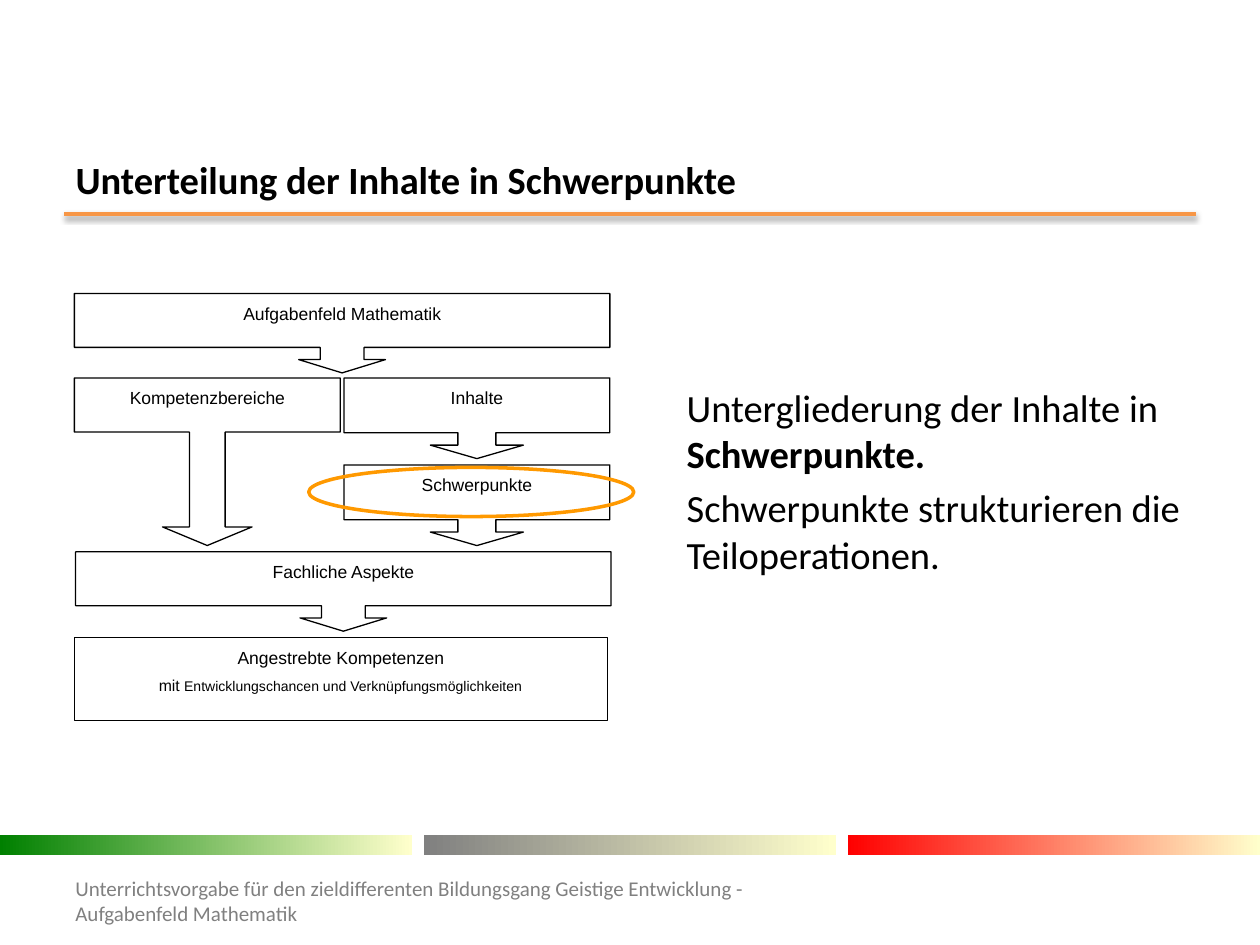
from lxml.etree import SubElement
from pptx import Presentation
from pptx.dml.color import RGBColor
from pptx.enum.shapes import MSO_CONNECTOR, MSO_SHAPE
from pptx.enum.text import MSO_ANCHOR, MSO_AUTO_SIZE, PP_ALIGN
from pptx.oxml.ns import qn
from pptx.util import Inches, Pt

COLORS = {"text": "000000", "paper": "FFFFFF", "footer": "808080", "rule": "F79646",
          "highlight": "FF9900", "cream": "FFFFCC"}
BAR_COLORS = ["008000", "808080", "FF0000"]

TITLE = "Unterteilung der Inhalte in Schwerpunkte"
BODY = [[("Untergliederung der Inhalte in ", False), ("Schwerpunkte.", True)],
        [("Schwerpunkte strukturieren die Teiloperationen.", False)]]
FOOTER = ("Unterrichtsvorgabe für den zieldifferenten Bildungsgang Geistige Entwicklung - "
          "Aufgabenfeld Mathematik")

# Diagram grid: two columns and five rows
LEFT, COL_W, COL_GAP = 0.59, 2.11, 0.03
FULL_W = 2 * COL_W + COL_GAP
RIGHT = LEFT + COL_W + COL_GAP
ROWS = [2.33, 3.0, 3.69, 4.38, 5.06]
STEP_H = 0.64
WIDE = (0.553, 0.546, 0.167, 0.679)
NARROW = (0.471, 0.577, 0.167, 0.679)
LONG = (0.213, 0.267, 0.111, 0.323)
# text, left, row, width, height, arrow proportions
STEPS = [
    ("Aufgabenfeld Mathematik", LEFT, 0, FULL_W, 0.63, WIDE),
    ("Kompetenzbereiche", LEFT, 1, COL_W, ROWS[2] + STEP_H - ROWS[1], LONG),
    ("Inhalte", RIGHT, 1, COL_W, STEP_H, NARROW),
    ("Schwerpunkte", RIGHT, 2, COL_W, STEP_H, NARROW),
    ("Fachliche Aspekte", LEFT + 0.01, 3, FULL_W, 0.63, WIDE),
]
GOAL = [[("Angestrebte Kompetenzen", 10)],
        [("mit ", 9), ("Entwicklungschancen und Verknüpfungsmöglichkeiten", 8)]]


def rgb(name):
    return RGBColor.from_string(COLORS.get(name, name))


def place(shape, left, top, width, height):
    shape.left, shape.top = Inches(left), Inches(top)
    shape.width, shape.height = Inches(width), Inches(height)


def add_run(p, text, size, font="Calibri", color="text", bold=False):
    r = p.add_run()
    r.text = text
    r.font.size, r.font.name, r.font.bold = Pt(size), font, bold
    r.font.color.rgb = rgb(color)


def add_shape(s, kind, left, top, width, height, line="text", weight=0.75):
    shape = s.shapes.add_shape(kind, *map(Inches, (left, top, width, height)))
    shape.shadow.inherit = False
    shape.fill.solid()
    shape.fill.fore_color.rgb = rgb("paper")
    shape.line.color.rgb = rgb(line)
    shape.line.width = Pt(weight)
    return shape


def write_step(shape, paragraphs, after):
    tf = shape.text_frame
    tf.word_wrap = True
    tf.vertical_anchor = MSO_ANCHOR.TOP
    for i, runs in enumerate(paragraphs):
        p = tf.paragraphs[0] if i == 0 else tf.add_paragraph()
        p.alignment, p.line_spacing, p.space_after = PP_ALIGN.CENTER, 1.15, Pt(after)
        for text, size in runs:
            add_run(p, text, size, "Arial")


def set_indent(p, margin, indent):
    pPr = p._p.get_or_add_pPr()
    pPr.set("marL", str(Inches(margin)))
    pPr.set("indent", str(Inches(indent)))
    return pPr


def add_rule(s):
    rule = s.shapes.add_connector(MSO_CONNECTOR.STRAIGHT, Inches(0.51), Inches(1.7),
                                  Inches(9.49), Inches(1.7))
    rule.line.color.rgb = rgb("rule")
    rule.line.width = Pt(2)
    effects = SubElement(rule._element.spPr, qn("a:effectLst"))
    shadow = SubElement(effects, qn("a:outerShdw"), blurRad=str(Pt(3.1)), dist=str(Pt(1.6)),
                        dir="5400000", rotWithShape="0")
    black = SubElement(shadow, qn("a:srgbClr"), val=COLORS["text"])
    SubElement(black, qn("a:alpha"), val="38000")


def add_bars(s):
    width = 3.27
    pitch = (10 - width) / (len(BAR_COLORS) - 1)
    for i, color in enumerate(BAR_COLORS):
        bar = add_shape(s, MSO_SHAPE.RECTANGLE, i * pitch, 6.63, width, 0.16)
        bar.line.fill.background()
        bar.fill.gradient()
        bar.fill.gradient_angle = 0
        for stop, name, position in zip(bar.fill.gradient_stops, (color, "cream"), (0, 1)):
            stop.color.rgb = rgb(name)
            stop.position = position


def add_texts(s):
    title, body = s.shapes.title, s.placeholders[1]
    place(title, 0.5, 1.23, 9, 0.39)
    title.text_frame.auto_size = MSO_AUTO_SIZE.NONE
    title.text_frame.vertical_anchor = MSO_ANCHOR.MIDDLE
    p = title.text_frame.paragraphs[0]
    p.alignment = PP_ALIGN.LEFT
    add_run(p, TITLE, 22, bold=True)

    place(body, 5.35, 3, 4.25, 2.32)
    body.fill.solid()
    body.fill.fore_color.rgb = rgb("paper")
    tf = body.text_frame
    tf.auto_size = MSO_AUTO_SIZE.NONE
    for i, runs in enumerate(BODY):
        p = tf.paragraphs[0] if i == 0 else tf.add_paragraph()
        SubElement(set_indent(p, 0, 0), qn("a:buNone"))
        p.space_before = Pt(4.4 if i else 0)
        for text, bold in runs:
            add_run(p, text, 22, bold=bold)

    footer = s.shapes.add_textbox(*map(Inches, (0.5, 6.95, 5.68, 0.4)))
    footer.text_frame.word_wrap = True
    footer.text_frame.vertical_anchor = MSO_ANCHOR.MIDDLE
    add_run(footer.text_frame.paragraphs[0], FOOTER, 12, color="footer")


def add_diagram(s):
    for text, left, row, width, height, proportions in STEPS:
        step = add_shape(s, MSO_SHAPE.DOWN_ARROW_CALLOUT, left, ROWS[row], width, height)
        for i, value in enumerate(proportions):
            step.adjustments[i] = value
        write_step(step, [[(text, 10)]], after=10)
    goal = add_shape(s, MSO_SHAPE.RECTANGLE, LEFT, ROWS[4], 4.23, 0.66)
    write_step(goal, GOAL, after=3)
    set_indent(goal.text_frame.paragraphs[0], 0.25, -0.25)
    highlight = add_shape(s, MSO_SHAPE.OVAL, 2.45, 3.71, 2.58, 0.39, "highlight", 2)
    highlight.fill.background()


def main():
    prs = Presentation()
    prs.slide_width, prs.slide_height = Inches(10), Inches(7.5)
    s = prs.slides.add_slide(prs.slide_layouts[1])
    add_rule(s)
    add_bars(s)
    add_texts(s)
    add_diagram(s)
    prs.save("out.pptx")


if __name__ == "__main__":
    main()
